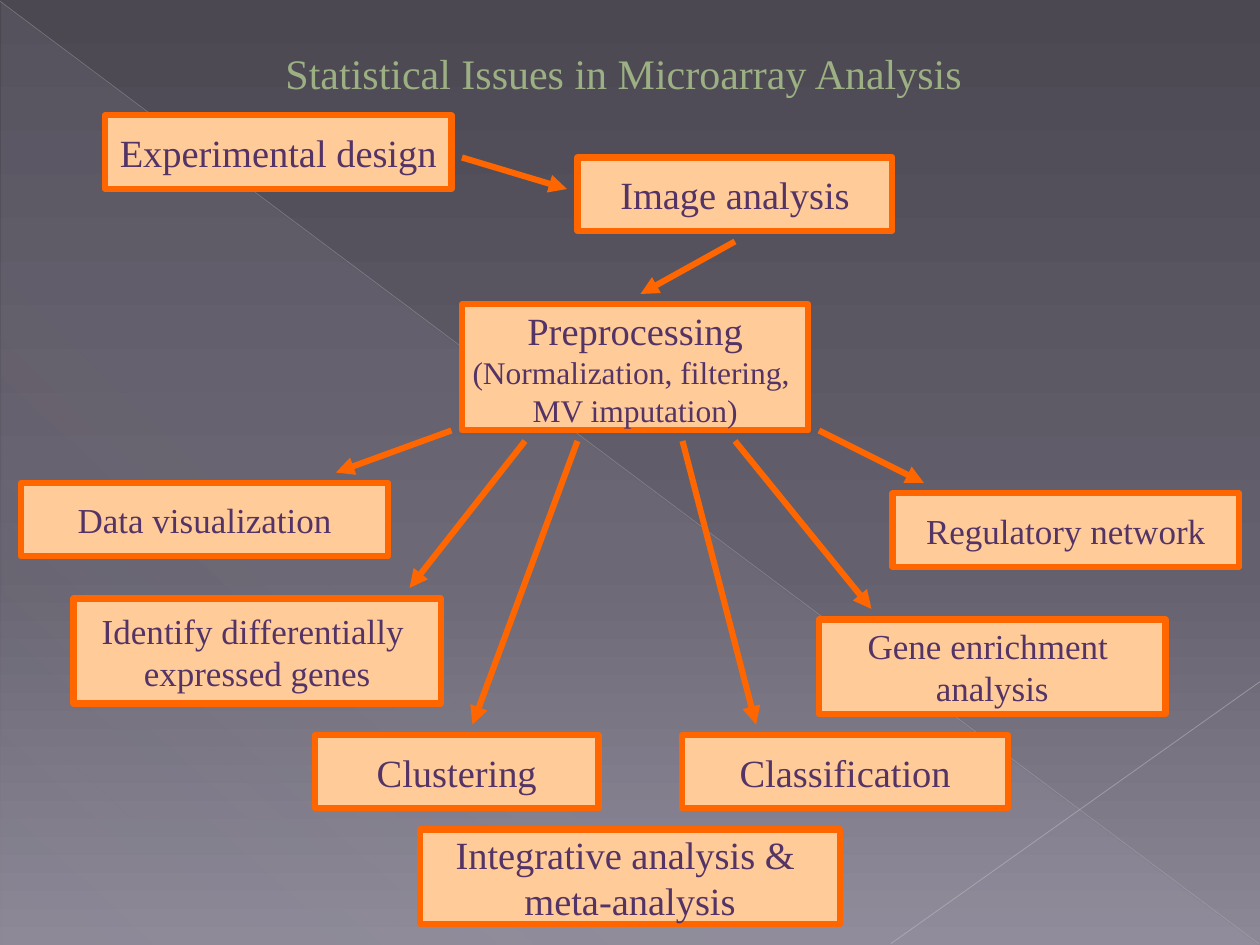
from dataclasses import dataclass

from lxml.etree import SubElement
from pptx import Presentation
from pptx.dml.color import RGBColor
from pptx.enum.shapes import MSO_CONNECTOR, MSO_SHAPE
from pptx.enum.text import MSO_ANCHOR, PP_ALIGN
from pptx.oxml.ns import qn
from pptx.shapes.connector import Connector
from pptx.slide import Slide
from pptx.text.text import TextFrame
from pptx.util import Inches, Length, Pt


@dataclass(frozen=True)
class Theme:
    font: str = "Times New Roman"
    title: str = "9CB084"
    text: str = "543466"
    box_fill: str = "FFCC99"
    accent: str = "FF6600"
    veil: str = "C9C2D1"
    background: tuple = ((0, "4B4852", 100), (60, "64606D", 100), (100, "8C8896", 100))
    title_size: int = 24
    large: int = 22
    medium: int = 20
    small: int = 18
    stroke: float = 3.5


@dataclass(frozen=True)
class Box:
    """A step of the workflow, placed in grid cells."""
    column: int
    row: int
    columns: int
    rows: int
    lines: tuple[str, ...]
    size: int
    detail_size: int | None = None


@dataclass(frozen=True)
class Arrow:
    """Start and end of an arrow, in grid cells."""
    start: tuple[int, int]
    end: tuple[int, int]


@dataclass(frozen=True)
class Rule:
    """A faint background line, in inches."""
    start: tuple[float, float]
    end: tuple[float, float]
    color: str
    width: float
    opacity: int


THEME = Theme()
CELLS_PER_INCH = 12

BOXES = (
    Box(10, 11, 33, 7, ("Experimental design",), THEME.large),
    Box(55, 15, 30, 7, ("Image analysis",), THEME.large),
    Box(44, 29, 33, 12, ("Preprocessing", "(Normalization, filtering, ", "MV imputation)"),
        THEME.large, THEME.small),
    Box(2, 46, 35, 7, ("Data visualization",), THEME.medium),
    Box(7, 57, 35, 10, ("Identify differentially ", "expressed genes"), THEME.medium),
    Box(85, 47, 33, 7, ("Regulatory network",), THEME.medium),
    Box(30, 70, 27, 7, ("Clustering",), THEME.large),
    Box(65, 70, 31, 7, ("Classification",), THEME.large),
    Box(78, 59, 33, 9, ("Gene enrichment ", "analysis"), THEME.medium),
    Box(40, 79, 40, 9, ("Integrative analysis & ", "meta-analysis"), THEME.large),
)

ARROWS = (
    Arrow((44, 15), (54, 18)),
    Arrow((70, 23), (61, 28)),
    Arrow((43, 41), (32, 45)),
    Arrow((50, 42), (39, 56)),
    Arrow((55, 42), (45, 69)),
    Arrow((65, 42), (72, 69)),
    Arrow((70, 42), (83, 58)),
    Arrow((78, 41), (88, 46)),
)

RULES = (
    Rule((0, 0.01), (9.99, 7.49), "C0BFC2", 0.39, 35),
    Rule((10, 5.41), (7.07, 7.49), "C7C6C8", 0.47, 45),
)


def cells(count: int) -> Length:
    return Inches(count / CELLS_PER_INCH)


def rgb(color: str) -> RGBColor:
    return RGBColor.from_string(color)


def set_gradient(owner, stops: tuple, angle: int) -> None:
    """Replace the gradient found in owner; stops are (position, color, opacity)."""
    gradient = owner.find(".//" + qn("a:gradFill"))
    for child in list(gradient):
        gradient.remove(child)
    stop_list = SubElement(gradient, qn("a:gsLst"))
    for position, color, opacity in stops:
        stop = SubElement(stop_list, qn("a:gs"), pos=str(position * 1000))
        value = SubElement(stop, qn("a:srgbClr"), val=color)
        if opacity < 100:
            SubElement(value, qn("a:alpha"), val=str(opacity * 1000))
    SubElement(gradient, qn("a:lin"), ang=str(angle * 60000), scaled="0")


def write_lines(frame: TextFrame, lines: tuple[str, ...], sizes: list[int], color: str) -> None:
    frame.word_wrap = False
    for index, (line, size) in enumerate(zip(lines, sizes)):
        paragraph = frame.add_paragraph() if index else frame.paragraphs[0]
        paragraph.text = line
        paragraph.alignment = PP_ALIGN.CENTER
        paragraph.font.name = THEME.font
        paragraph.font.size = Pt(size)
        paragraph.font.color.rgb = rgb(color)


def add_line(slide: Slide, start: tuple[Length, Length], end: tuple[Length, Length],
             color: str, width: float) -> Connector:
    connector = slide.shapes.add_connector(MSO_CONNECTOR.STRAIGHT, *start, *end)
    connector.line.color.rgb = rgb(color)
    connector.line.width = Pt(width)
    SubElement(connector.element.spPr, qn("a:effectLst"))
    return connector


def add_rule(slide: Slide, rule: Rule) -> None:
    start, end = (tuple(map(Inches, point)) for point in (rule.start, rule.end))
    connector = add_line(slide, start, end, rule.color, rule.width)
    color = connector.element.find(".//" + qn("a:srgbClr"))
    SubElement(color, qn("a:alpha"), val=str(rule.opacity * 1000))


def add_arrow(slide: Slide, arrow: Arrow) -> None:
    start, end = (tuple(map(cells, point)) for point in (arrow.start, arrow.end))
    connector = add_line(slide, start, end, THEME.accent, THEME.stroke)
    SubElement(connector.line._get_or_add_ln(), qn("a:tailEnd"), type="triangle")


def add_box(slide: Slide, box: Box) -> None:
    shape = slide.shapes.add_shape(MSO_SHAPE.RECTANGLE, cells(box.column), cells(box.row),
                                   cells(box.columns), cells(box.rows))
    shape.shadow.inherit = False
    shape.fill.solid()
    shape.fill.fore_color.rgb = rgb(THEME.box_fill)
    shape.line.color.rgb = rgb(THEME.accent)
    shape.line.width = Pt(THEME.stroke)
    shape.text_frame.vertical_anchor = MSO_ANCHOR.MIDDLE
    sizes = [box.size] + [box.detail_size or box.size] * (len(box.lines) - 1)
    write_lines(shape.text_frame, box.lines, sizes, THEME.text)


def add_backdrop(slide: Slide) -> None:
    slide.background.fill.gradient()
    set_gradient(slide.element, THEME.background, 90)
    veil = slide.shapes.add_shape(MSO_SHAPE.RIGHT_TRIANGLE, Inches(0.01), Inches(0.02),
                                  Inches(9.98), Inches(7.48))
    veil.shadow.inherit = False
    veil.line.fill.background()
    veil.fill.gradient()
    stops = ((0, THEME.veil, 10), (70, THEME.veil, 8), (100, THEME.veil, 1))
    set_gradient(veil.element.spPr, stops, 133)
    for rule in RULES:
        add_rule(slide, rule)


def main() -> None:
    presentation = Presentation()
    presentation.slide_width = Inches(10)
    presentation.slide_height = Inches(7.5)
    slide = presentation.slides.add_slide(presentation.slide_layouts[6])

    add_backdrop(slide)

    # Title
    title = slide.shapes.add_textbox(Inches(2.14), Inches(0.33), Inches(5.62), Inches(0.51))
    write_lines(title.text_frame, ("Statistical Issues in Microarray Analysis",),
                [THEME.title_size], THEME.title)

    # Workflow
    for box in BOXES:
        add_box(slide, box)
    for arrow in ARROWS:
        add_arrow(slide, arrow)

    presentation.save("out.pptx")


if __name__ == "__main__":
    main()
